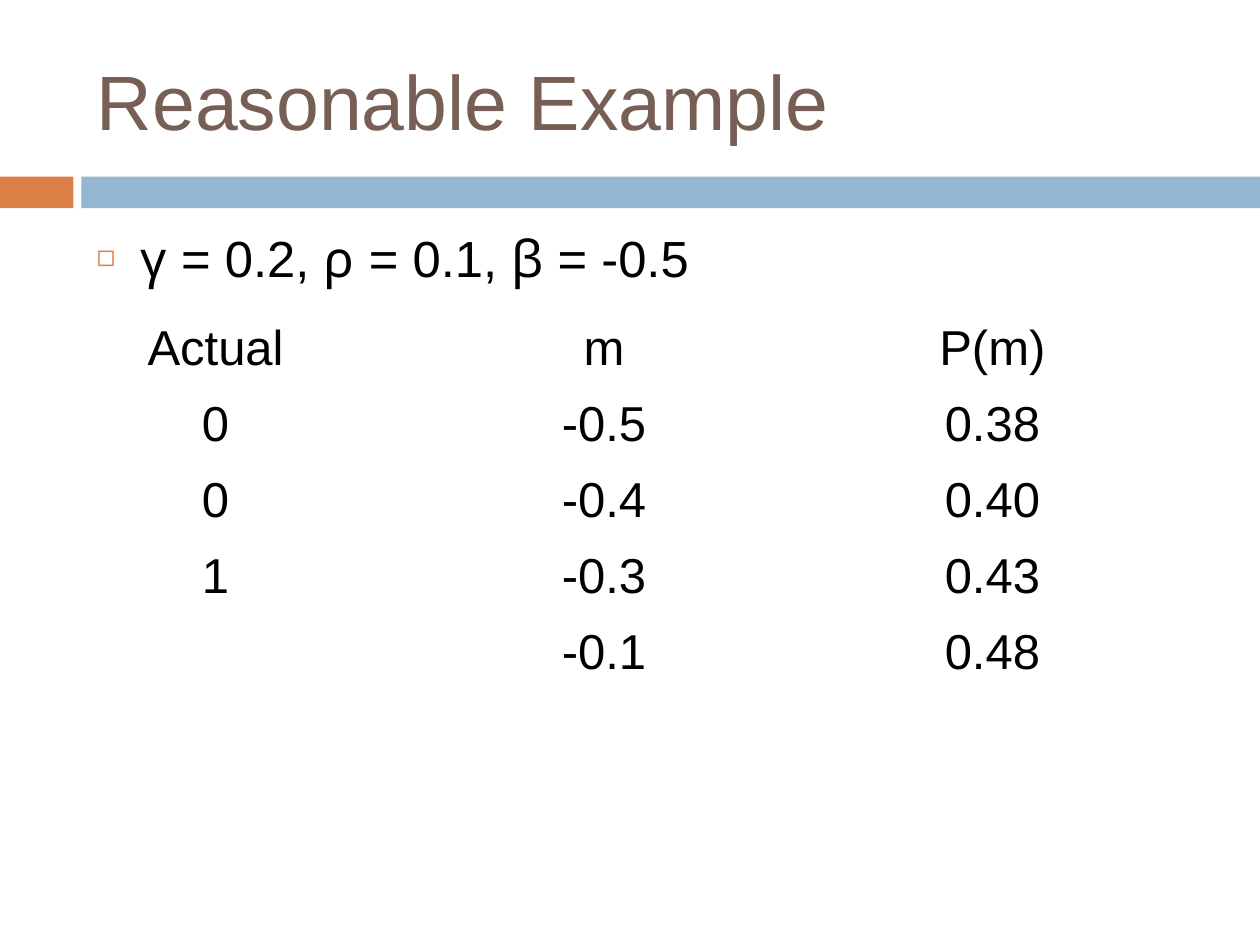
import pptx
import pptx.dml.color
import pptx.enum.shapes
import pptx.enum.text
import pptx.oxml
import pptx.oxml.ns
import pptx.util

Cm = pptx.util.Cm
Pt = pptx.util.Pt

COLORS = {
    "orange": "DD8047",
    "blue": "94B6D2",
    "brown": "775F55",
    "black": "000000",
}
TITLE = "Reasonable Example"
PARAMETERS = [
    ("γ", "Noto Sans"), (" = 0.2, ", "Arial"),
    ("ρ", "Noto Sans"), (" = 0.1, ", "Arial"),
    ("β", "Noto Sans"), (" = -0.5", "Arial"),
]
ROWS = [
    ("Actual", "m", "P(m)"),
    ("0", "-0.5", "0.38"),
    ("0", "-0.4", "0.40"),
    ("1", "-0.3", "0.43"),
    ("", "-0.1", "0.48"),
]
ROW_COUNT, COLUMN_COUNT = 8, 3
COLUMN_WIDTH, ROW_HEIGHT = Cm(7.83), Cm(1.53)
SLIDE_WIDTH = Cm(25.4)
TEXT_LEFT, TEXT_WIDTH = Cm(1.7), Cm(22.65)
BAND_TOP, BAND_HEIGHT = Cm(3.56), Cm(0.64)
BLUE_LEFT = Cm(1.64)
BANDS = [
    (0, Cm(1.48), "orange"),
    (BLUE_LEFT, SLIDE_WIDTH - BLUE_LEFT, "blue"),
]
BULLET_INDENT = Cm(0.89)


def rgb(name):
    return pptx.dml.color.RGBColor.from_string(COLORS[name])


def format_run(run, size, color, font="Arial"):
    run.font.name = font
    run.font.size = Pt(size)
    run.font.color.rgb = rgb(color)


def add_text_frame(slide, top, height):
    box = slide.shapes.add_textbox(TEXT_LEFT, top, TEXT_WIDTH, height)
    box.text_frame.word_wrap = True
    return box.text_frame


def add_bullet(paragraph):
    properties = paragraph._p.get_or_add_pPr()
    properties.set("marL", str(BULLET_INDENT))
    properties.set("indent", str(-BULLET_INDENT))
    namespace = pptx.oxml.ns.nsdecls("a")
    for xml in (
        f'<a:buClr {namespace}><a:srgbClr val="{COLORS["orange"]}"/></a:buClr>',
        f'<a:buSzPct {namespace} val="60000"/>',
        f'<a:buFont {namespace} typeface="Arial"/>',
        f'<a:buChar {namespace} char="◻"/>',
    ):
        properties.append(pptx.oxml.parse_xml(xml))


def add_bands(slide):
    for left, width, color in BANDS:
        band = slide.shapes.add_shape(
            pptx.enum.shapes.MSO_SHAPE.RECTANGLE, left, BAND_TOP, width, BAND_HEIGHT)
        band.shadow.inherit = False
        band.fill.solid()
        band.fill.fore_color.rgb = rgb(color)
        band.line.fill.background()


def add_title(slide):
    text_frame = add_text_frame(slide, Cm(0.64), Cm(2.74))
    text_frame.vertical_anchor = pptx.enum.text.MSO_ANCHOR.MIDDLE
    text_frame.text = TITLE
    format_run(text_frame.paragraphs[0].runs[0], 44, "brown")


def add_parameters(slide):
    paragraph = add_text_frame(slide, Cm(4.45), Cm(12.5)).paragraphs[0]
    add_bullet(paragraph)
    for text, font in PARAMETERS:
        run = paragraph.add_run()
        run.text = text
        format_run(run, 29, "black", font)


def add_results(slide):
    table = slide.shapes.add_table(
        ROW_COUNT, COLUMN_COUNT, Cm(0.43), Cm(6.35),
        COLUMN_WIDTH * COLUMN_COUNT, ROW_HEIGHT * ROW_COUNT).table
    table.first_row = False
    table.horz_banding = False
    for column in table.columns:
        column.width = COLUMN_WIDTH
    for row in table.rows:
        row.height = ROW_HEIGHT
    for cell in table.iter_cells():
        cell.fill.background()
    for row, values in zip(table.rows, ROWS):
        for cell, value in zip(row.cells, values):
            cell.text_frame.text = value
            paragraph = cell.text_frame.paragraphs[0]
            paragraph.alignment = pptx.enum.text.PP_ALIGN.CENTER
            for run in paragraph.runs:
                format_run(run, 28, "black")


def main():
    presentation = pptx.Presentation()
    presentation.slide_width = SLIDE_WIDTH
    presentation.slide_height = Cm(19.05)
    slide = presentation.slides.add_slide(presentation.slide_layouts[6])
    add_bands(slide)
    add_title(slide)
    add_parameters(slide)
    add_results(slide)
    presentation.save("out.pptx")


if __name__ == "__main__":
    main()
